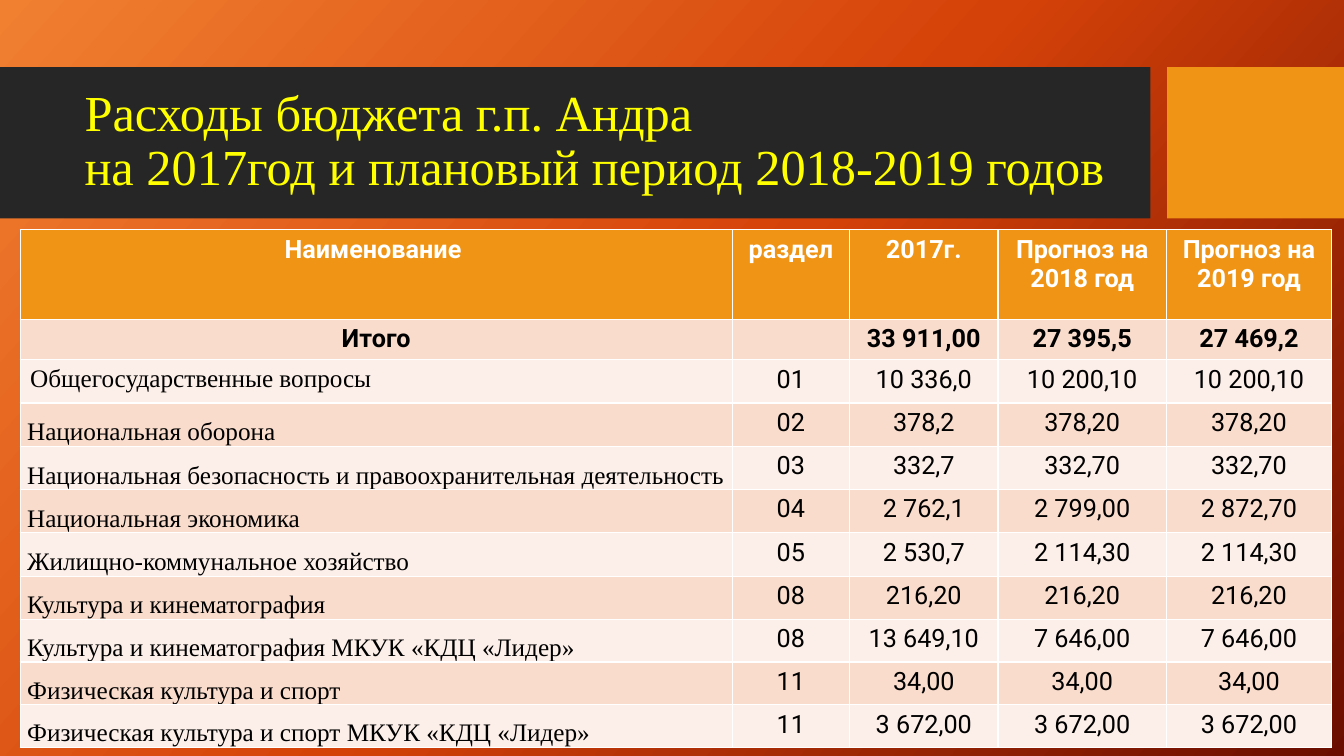
from copy import deepcopy

from lxml.etree import SubElement
from pptx import Presentation
from pptx.dml.color import RGBColor
from pptx.enum.shapes import MSO_SHAPE
from pptx.enum.text import MSO_ANCHOR, PP_ALIGN
from pptx.oxml.ns import qn
from pptx.util import Pt

TITLE_LINES = ["Расходы бюджета г.п. Андра ", "на 2017год и плановый период 2018-2019 годов"]
HEADER = ["Наименование ", "раздел", "2017г.", "Прогноз на 2018 год", "Прогноз на 2019 год"]
TOTAL = ["Итого", "", "33 911,00", "27 395,5", "27 469,2"]
EXPENSES = [
    ["Общегосударственные вопросы", "01", "10 336,0", "10 200,10", "10 200,10"],
    ["Национальная оборона", "02", "378,2", "378,20", "378,20"],
    ["Национальная безопасность и правоохранительная деятельность",
     "03", "332,7", "332,70", "332,70"],
    ["Национальная экономика", "04", "2 762,1", "2 799,00", "2 872,70"],
    ["Жилищно-коммунальное хозяйство", "05", "2 530,7", "2 114,30", "2 114,30"],
    ["Культура и кинематография", "08", "216,20", "216,20", "216,20"],
    ["Культура и кинематография МКУК «КДЦ «Лидер»",
     "08", "13 649,10", "7 646,00", "7 646,00"],
    ["Физическая культура и спорт", "11", "34,00", "34,00", "34,00"],
    ["Физическая культура и спорт МКУК «КДЦ «Лидер»",
     "11", "3 672,00", "3 672,00", "3 672,00"],
]

THEME = {
    "gradient": [(0, "F18031"), (0.5, "D54209"), (1, "6A0D00")],
    "gradient_angle": 42,
    "band": "262626", "accent": "F09415", "title": "FFFF00",
    "white": "FFFFFF", "black": "000000",
    "rows": ["F9DCCC", "FCEEE8"],
    "serif": "Times New Roman", "sans": "Roboto",
    "title_size": 36, "table_size": 18, "border": 1,
}

SLIDE_WIDTH, SLIDE_HEIGHT = 960, 540
BAND_TOP, BAND_HEIGHT = 48, 108
BAND_WIDTH, ACCENT_LEFT = 821.7, 833.6
TABLE_LEFT, TABLE_TOP = 14.4, 164.2
COLUMN_WIDTHS = [508.6, 83.9, 106, 120.3, 118]
ROW_HEIGHTS = [64, 28.4] + [30.9] * 6 + [30.5] * 3


def color(name):
    return RGBColor.from_string(THEME.get(name, name))


def paint_background(page):
    fill = page.background.fill
    fill.gradient()
    fill.gradient_angle = 360 - THEME["gradient_angle"]
    stop_list = page.element.xpath(".//a:gsLst")[0]
    stop_list.append(deepcopy(stop_list[0]))
    for stop, (position, shade) in zip(fill.gradient_stops, THEME["gradient"]):
        stop.position = position
        stop.color.rgb = color(shade)


def add_block(page, left, width, fill_name):
    block = page.shapes.add_shape(
        MSO_SHAPE.RECTANGLE, Pt(left), Pt(BAND_TOP), Pt(width), Pt(BAND_HEIGHT))
    block.shadow.inherit = False
    block.fill.solid()
    block.fill.fore_color.rgb = color(fill_name)
    block.line.fill.background()


def add_span(para, text, font_name, size, color_name, bold=False):
    span = para.add_run()
    span.text = text
    span.font.name = font_name
    span.font.size = Pt(size)
    span.font.bold = bold
    span.font.color.rgb = color(color_name)


def add_title(page):
    box = page.shapes.add_textbox(Pt(53.3), Pt(59), Pt(756.7), Pt(85))
    frame = box.text_frame
    frame.word_wrap = True
    frame.vertical_anchor = MSO_ANCHOR.MIDDLE
    para = frame.paragraphs[0]
    para.line_spacing = 0.9
    for index, line in enumerate(TITLE_LINES):
        if index:
            para.add_line_break()
        add_span(para, line, THEME["serif"], THEME["title_size"], "title")


def add_borders(cell):
    properties = cell._tc.get_or_add_tcPr()
    for side in ("a:lnL", "a:lnR", "a:lnT", "a:lnB"):
        line = SubElement(properties, qn(side), w=str(Pt(THEME["border"])))
        fill = SubElement(line, qn("a:solidFill"))
        SubElement(fill, qn("a:srgbClr"), val=THEME["white"])


def fill_cell(cell, text, row, column):
    add_borders(cell)
    cell.fill.solid()
    cell.fill.fore_color.rgb = color(THEME["rows"][(row - 1) % 2] if row else "accent")
    is_expense_name = column == 0 and row > 1
    if is_expense_name and row > 2:
        cell.vertical_anchor = MSO_ANCHOR.BOTTOM
        cell.margin_left = cell.margin_right = Pt(5)
        cell.margin_top = cell.margin_bottom = Pt(0)
    para = cell.text_frame.paragraphs[0]
    para.alignment = PP_ALIGN.LEFT if is_expense_name else PP_ALIGN.CENTER
    if text:
        add_span(para, text, THEME["serif" if is_expense_name else "sans"],
                 THEME["table_size"], "black" if row else "white", bold=row < 2)


def add_budget_table(page):
    rows = [HEADER, TOTAL] + EXPENSES
    table = page.shapes.add_table(
        len(rows), len(HEADER), Pt(TABLE_LEFT), Pt(TABLE_TOP),
        Pt(sum(COLUMN_WIDTHS)), Pt(sum(ROW_HEIGHTS))).table
    for column, width in zip(table.columns, COLUMN_WIDTHS):
        column.width = Pt(width)
    for row, height in zip(table.rows, ROW_HEIGHTS):
        row.height = Pt(height)
    for row, texts in enumerate(rows):
        for column, text in enumerate(texts):
            fill_cell(table.cell(row, column), text, row, column)


def main():
    deck = Presentation()
    deck.slide_width, deck.slide_height = Pt(SLIDE_WIDTH), Pt(SLIDE_HEIGHT)
    page = deck.slides.add_slide(deck.slide_layouts[6])
    paint_background(page)
    add_block(page, 0, BAND_WIDTH, "band")
    add_block(page, ACCENT_LEFT, SLIDE_WIDTH - ACCENT_LEFT, "accent")
    add_title(page)
    add_budget_table(page)
    deck.save("out.pptx")


if __name__ == "__main__":
    main()
